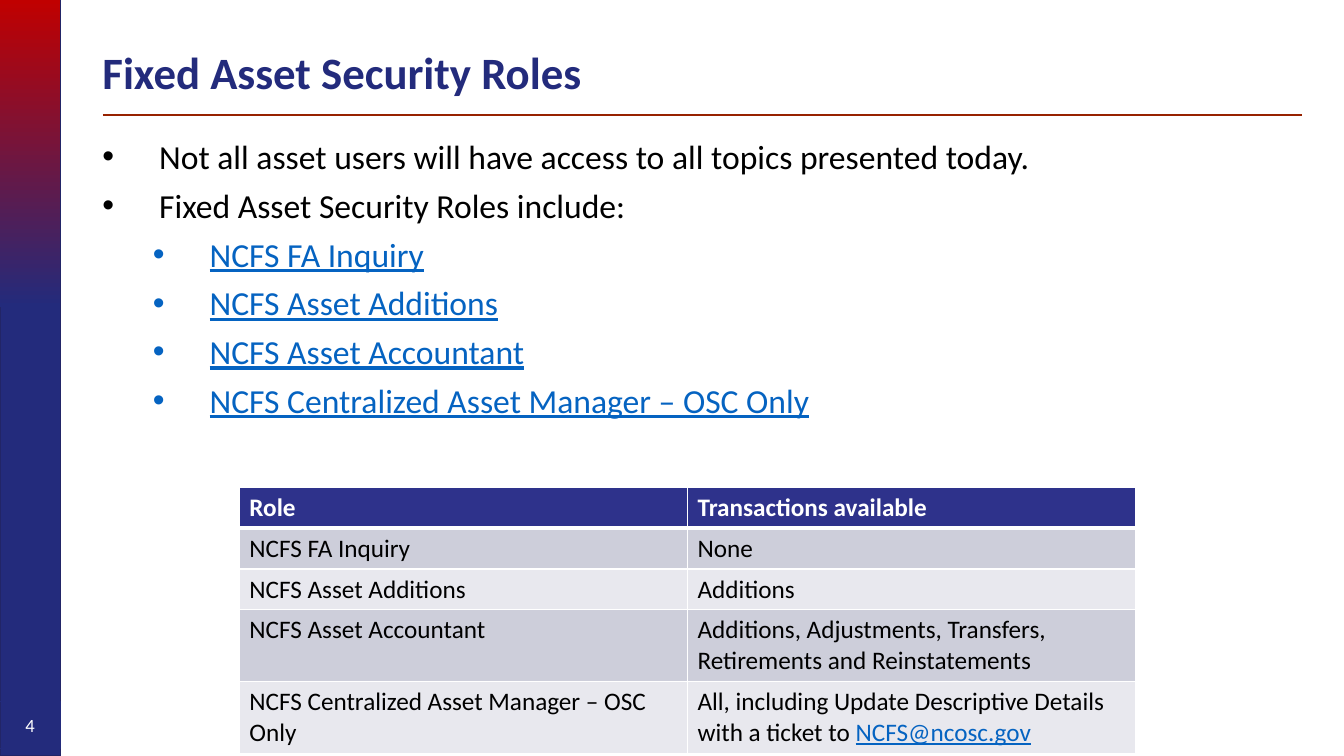
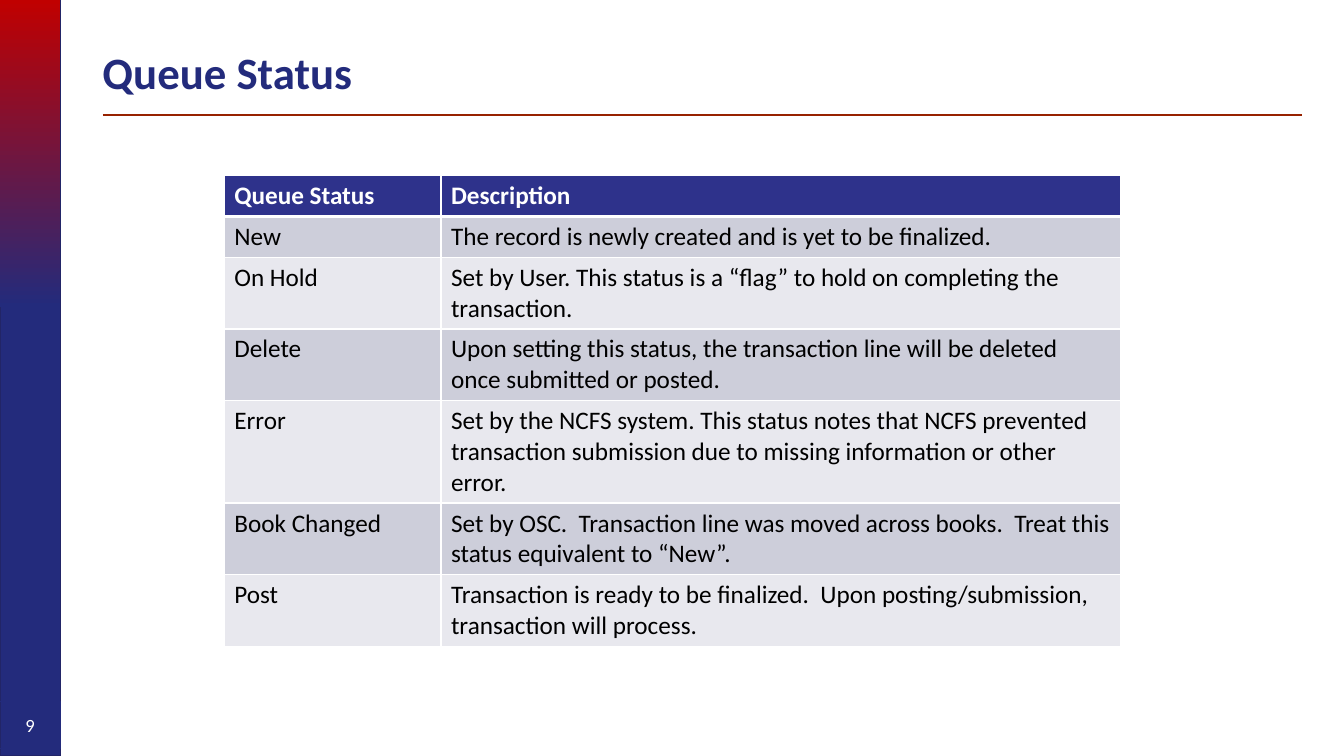
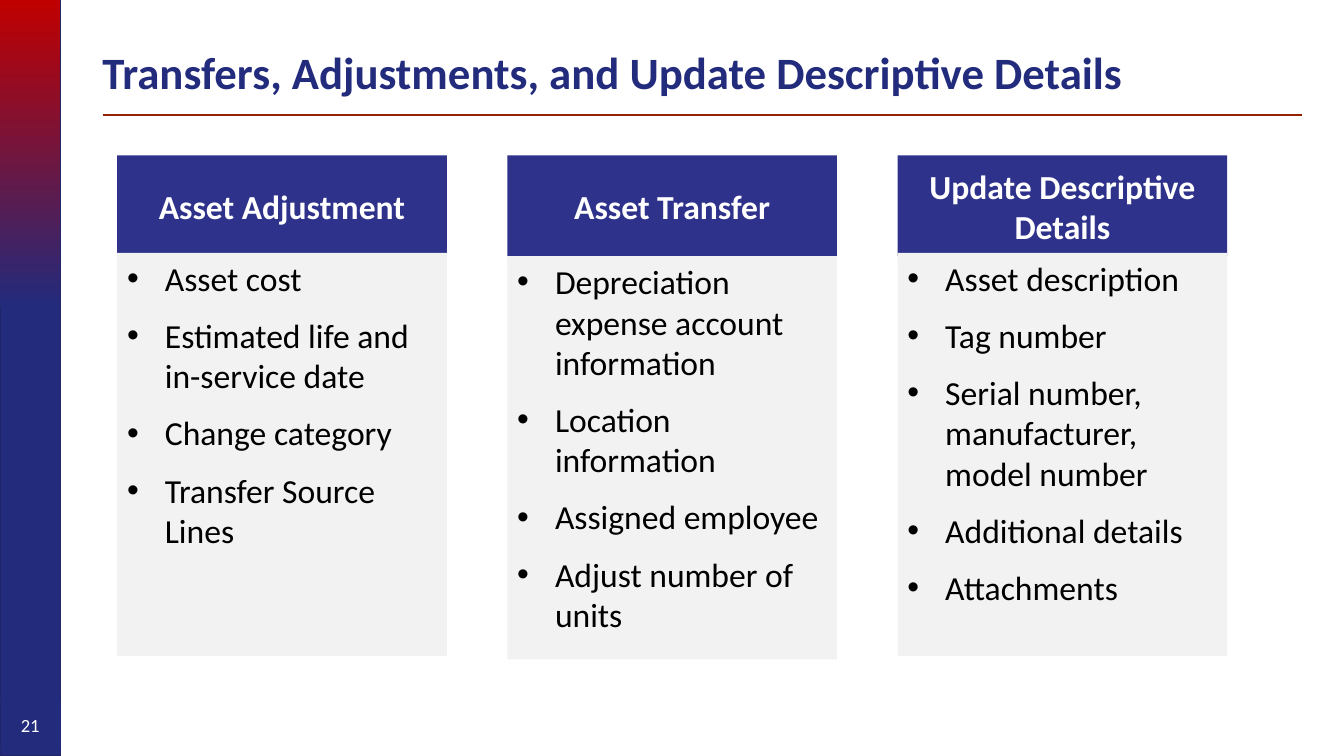
from lxml import etree
from pptx import Presentation
from pptx.dml.color import RGBColor
from pptx.enum.shapes import MSO_CONNECTOR, MSO_SHAPE
from pptx.enum.text import MSO_ANCHOR as ANCHOR, MSO_AUTO_SIZE, PP_ALIGN as ALIGN
from pptx.oxml.ns import qn
from pptx.util import Inches, Pt

COLS, ROWS = 160, 90
FONT = "Calibri"
NAVY, NAVY_EDGE, INDIGO = "232B7C", "222567", "2E328B"
RED, RULE = "C00000", "972200"
BLACK, WHITE, LINK = "000000", "FFFFFF", "0563C1"
ROW_FILLS = ("CDCEDA", "E8E8EE")
CARD = "F2F2F2"


def rgb(color):
    return RGBColor.from_string(color)


class Deck:
    """Holds the house style and the slide being filled."""

    def __init__(self):
        self.prs = Presentation()
        self.prs.slide_width = Inches(13.33)
        self.prs.slide_height = Inches(7.5)
        self.slide = None

    def x(self, cols):
        return int(self.prs.slide_width * cols / COLS)

    def y(self, rows):
        return int(self.prs.slide_height * rows / ROWS)

    def box(self, left, top, width, height):
        return self.x(left), self.y(top), self.x(width), self.y(height)

    def place(self, sp, *at):
        sp.left, sp.top, sp.width, sp.height = self.box(*at)

    def new_slide(self, title, number, layout="Title Only"):
        layouts = self.prs.slide_layouts
        self.slide = self.prs.slides.add_slide(layouts.get_by_name(layout))
        self.side_band(number)
        self.rule(12.25, 155, 13.7)
        sp = self.slide.shapes.title
        self.place(sp, 11, 4.8, 144, 8.3)
        tf = sp.text_frame
        tf.text = title
        tf.vertical_anchor = ANCHOR.MIDDLE
        tf.auto_size = MSO_AUTO_SIZE.NONE
        p = tf.paragraphs[0]
        p.alignment = ALIGN.LEFT
        p.line_spacing = 0.9
        self.style(p, 32, NAVY, bold=True)

    def side_band(self, number):
        self.rect((0, 0, 7.2, ROWS), NAVY, NAVY_EDGE, 1)
        fade = self.rect((0, 0, 7.2, 36.5)).fill
        fade.gradient()
        fade.gradient_angle = 270
        for stop, color in zip(fade.gradient_stops, (RED, NAVY)):
            stop.color.rgb = rgb(color)
        sp = self.rect((0, 83.5, 7.2, 5.6), None, NAVY, 0.75)
        self.label(sp, str(number), 13.3)

    def rect(self, at, fill=None, line=None, weight=0):
        sp = self.slide.shapes.add_shape(MSO_SHAPE.RECTANGLE, *self.box(*at))
        sp.shadow.inherit = False
        if fill:
            sp.fill.solid()
            sp.fill.fore_color.rgb = rgb(fill)
        else:
            sp.fill.background()
        if line:
            sp.line.color.rgb = rgb(line)
            sp.line.width = Pt(weight)
        else:
            sp.line.fill.background()
        return sp

    def rule(self, left, right, top):
        line = self.slide.shapes.add_connector(
            MSO_CONNECTOR.STRAIGHT, self.x(left), self.y(top), self.x(right), self.y(top))
        line.line.color.rgb = rgb(RULE)
        line.line.width = Pt(1.5)
        etree.SubElement(line._element.spPr, qn("a:effectLst"))

    def style(self, p, size, color=BLACK, bold=False, underline=False):
        for r in p.runs:
            font = r.font
            font.name, font.size, font.bold = FONT, Pt(size), bold
            font.underline = underline
            font.color.rgb = rgb(color)

    def label(self, sp, text, size, bold=False):
        """Centred white text inside a shape."""
        tf = sp.text_frame
        tf.text = text
        tf.word_wrap = True
        tf.vertical_anchor = ANCHOR.MIDDLE
        p = tf.paragraphs[0]
        p.alignment = ALIGN.CENTER
        self.style(p, size, WHITE, bold)

    def bullet(self, p, indent, hang, before=0):
        pPr = p._p.get_or_add_pPr()
        pPr.set("marL", str(self.x(indent)))
        pPr.set("indent", str(-self.x(hang)))
        etree.SubElement(pPr, qn("a:buFont"), typeface="Arial")
        etree.SubElement(pPr, qn("a:buChar"), char="•")
        p.alignment = ALIGN.LEFT
        p.space_before, p.space_after = Pt(before), Pt(6)

    def body(self, items, *at):
        """Fill the body placeholder from (level, text) pairs; level 1 looks like links."""
        sp = self.slide.placeholders[1]
        self.place(sp, *at)
        tf = sp.text_frame
        tf.auto_size = MSO_AUTO_SIZE.NONE
        tf.text = "\n".join(text for _, text in items)
        for p, (level, _) in zip(tf.paragraphs, items):
            p.level = level
            self.bullet(p, 6.75 + 6 * level, 6.75)
            self.style(p, 24, LINK if level else BLACK, underline=bool(level))

    def card(self, left, heading, items, body_top):
        width = 39.25
        self.label(self.rect((left, 18.5, width, 12), INDIGO), heading, 24, bold=True)
        tf = self.rect((left, body_top, width, 48), CARD).text_frame
        tf.text = "\n".join(items)
        tf.word_wrap = True
        tf.vertical_anchor = ANCHOR.TOP
        for i, p in enumerate(tf.paragraphs):
            self.bullet(p, 4.5, 4.5, before=6 if i else 0)
            self.style(p, 24)

    def borders(self, cell, bottom):
        tcPr = cell._tc.get_or_add_tcPr()
        for side, weight in zip("LRTB", (1, 1, 1, bottom)):
            ln = etree.SubElement(tcPr, qn("a:ln" + side), w=str(Pt(weight)))
            fill = etree.SubElement(ln, qn("a:solidFill"))
            etree.SubElement(fill, qn("a:srgbClr"), val=WHITE)

    def table(self, left, top, widths, rows):
        """Draw rows of text; a (text, address) pair ends its cell with a link-styled run."""
        row_height = 4.87
        at = self.box(left, top, sum(widths), row_height * len(rows))
        table = self.slide.shapes.add_table(len(rows), len(widths), *at).table
        for column, width in zip(table.columns, widths):
            column.width = self.x(width)
        for i, row in enumerate(rows):
            table.rows[i].height = self.y(row_height)
            header = i == 0
            for j, content in enumerate(row):
                text, address = (content, None) if isinstance(content, str) else content
                cell = table.cell(i, j)
                self.borders(cell, 3 if header else 1)
                cell.fill.solid()
                cell.fill.fore_color.rgb = rgb(INDIGO if header else ROW_FILLS[(i - 1) % 2])
                p = cell.text_frame.paragraphs[0]
                p.text = text
                self.style(p, 18, WHITE if header else BLACK, bold=header)
                if address:
                    r = p.add_run()
                    r.text = address
                    font = r.font
                    font.name, font.size, font.underline = FONT, Pt(18), True
                    font.color.rgb = rgb(LINK)


def security_roles(deck):
    roles = ["NCFS FA Inquiry", "NCFS Asset Additions", "NCFS Asset Accountant",
             "NCFS Centralized Asset Manager – OSC Only"]
    transactions = [
        "None", "Additions",
        "Additions, Adjustments, Transfers, Retirements and Reinstatements",
        ("All, including Update Descriptive Details with a ticket to ", "NCFS@ncosc.gov")]
    deck.new_slide("Fixed Asset Security Roles", 4, "Title and Content")
    intro = [(0, "Not all asset users will have access to all topics presented today."),
             (0, "Fixed Asset Security Roles include:")]
    deck.body(intro + [(1, role) for role in roles], 11, 15.6, 141.6, 35.4)
    deck.table(28.5, 58, (53.35, 53.35),
               [("Role", "Transactions available"), *zip(roles, transactions)])


def queue_status(deck):
    deck.new_slide("Queue Status", 9)
    deck.table(26.7, 20.9, (25.8, 80.9), [
        ("Queue Status", "Description"),
        ("New", "The record is newly created and is yet to be finalized."),
        ("On Hold", "Set by User. This status is a “flag” to hold on completing the "
                    "transaction."),
        ("Delete", "Upon setting this status, the transaction line will be deleted once "
                   "submitted or posted."),
        ("Error", "Set by the NCFS system. This status notes that NCFS prevented transaction "
                  "submission due to missing information or other error."),
        ("Book Changed", "Set by OSC.  Transaction line was moved across books.  Treat this "
                         "status equivalent to “New”."),
        ("Post", "Transaction is ready to be finalized.  Upon posting/submission, transaction "
                 "will process."),
    ])


def asset_changes(deck):
    deck.new_slide("Transfers, Adjustments, and Update Descriptive Details", 21)
    cards = [
        ("Asset Adjustment", 30.1,
         ["Asset cost", "Estimated life and in-service date", "Change category",
          "Transfer Source Lines"]),
        ("Asset Transfer", 30.5,
         ["Depreciation expense account information", "Location information",
          "Assigned employee", "Adjust number of units"]),
        ("Update Descriptive Details", 30.1,
         ["Asset description", "Tag number", "Serial number, manufacturer, model number",
          "Additional details", "Attachments"]),
    ]
    for i, (heading, body_top, items) in enumerate(cards):
        deck.card(13.95 + 46.45 * i, heading, items, body_top)


def main():
    deck = Deck()
    security_roles(deck)
    queue_status(deck)
    asset_changes(deck)
    deck.prs.save("out.pptx")


if __name__ == "__main__":
    main()
